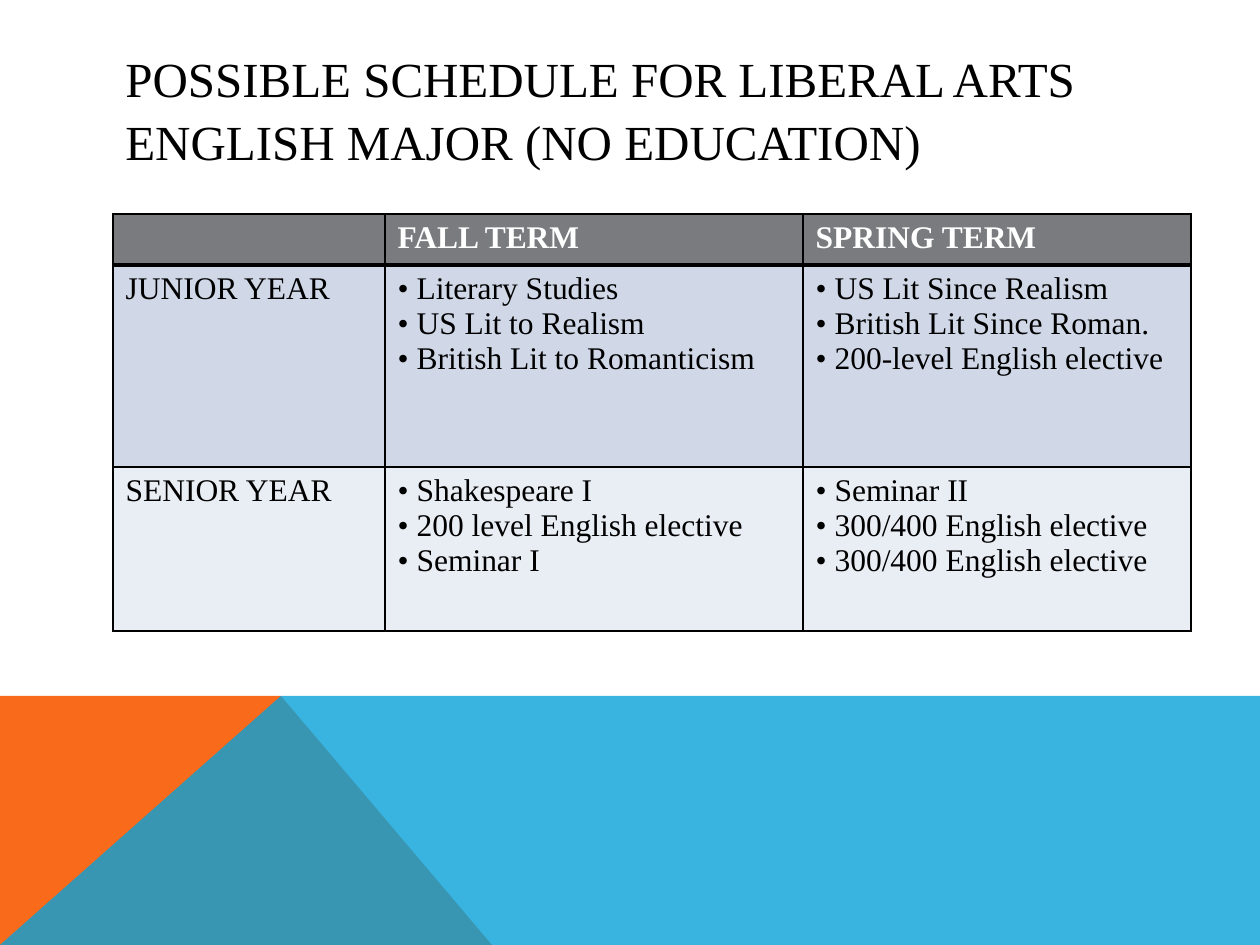
from typing import NamedTuple

from lxml import etree
from pptx import Presentation
from pptx.dml.color import RGBColor
from pptx.enum.text import MSO_ANCHOR
from pptx.oxml.ns import qn
from pptx.util import Pt

PX = 914400 / 126
MIDDLE = MSO_ANCHOR.MIDDLE
FONT = "Times New Roman"
COLORS = {
    "black": "000000",
    "white": "FFFFFF",
    "header": "797B7E",
    "junior": "D0D8E8",
    "senior": "E9EDF4",
    "orange": "F96A1B",
    "blue": "08A1D9",
}
TITLE = "POSSIBLE SCHEDULE FOR LIBERAL ARTS ENGLISH MAJOR (NO EDUCATION)"
COLUMN_WIDTHS = (272, 418, 388)


class Band(NamedTuple):
    points: list[tuple[int, int]]
    color: str
    opacity: int


class ScheduleRow(NamedTuple):
    height: int
    fill: str
    label: str
    terms: list[list[str]]
    top_line: int = 1
    bottom_line: int = 1
    header: bool = False


BANDS = [
    Band([(0, 945), (0, 696), (281, 696), (492, 945)], "orange", 100),
    Band([(0, 945), (281, 696), (1260, 696), (1260, 945)], "blue", 80),
]
SCHEDULE = [
    ScheduleRow(51, "header", "", [["FALL TERM"], ["SPRING TERM"]],
                bottom_line=3, header=True),
    ScheduleRow(202, "junior", "JUNIOR YEAR", [
        ["Literary Studies", "US Lit to Realism", "British Lit to Romanticism"],
        ["US Lit Since Realism", "British Lit Since Roman.",
         "200-level English elective"],
    ], top_line=3),
    ScheduleRow(164, "senior", "SENIOR YEAR", [
        ["Shakespeare I", "200 level English elective", "Seminar I"],
        ["Seminar II", "300/400 English elective", "300/400 English elective"],
    ]),
]


def emu(px: int) -> int:
    return round(px * PX)


def rgb(name: str) -> RGBColor:
    return RGBColor.from_string(COLORS[name])


def style_text(paragraph, size: int, color: str, bold: bool = False) -> None:
    paragraph.font.size = Pt(size)
    for run in paragraph.runs:
        run.font.name = FONT
        run.font.size = Pt(size)
        run.font.bold = bold
        run.font.color.rgb = rgb(color)


def draw_band(slide, band: Band) -> None:
    builder = slide.shapes.build_freeform(*band.points[0], scale=PX)
    builder.add_line_segments(band.points[1:], close=True)
    shape = builder.convert_to_shape()
    shape.shadow.inherit = False
    shape.line.fill.background()
    shape.fill.solid()
    shape.fill.fore_color.rgb = rgb(band.color)
    if band.opacity < 100:
        color = shape.fill._xPr.find(".//" + qn("a:srgbClr"))
        etree.SubElement(color, qn("a:alpha"), val=str(band.opacity * 1000))


def add_bullet(paragraph) -> None:
    properties = paragraph._p.get_or_add_pPr()
    properties.set("marL", str(emu(19)))
    properties.set("indent", str(-emu(19)))
    etree.SubElement(properties, qn("a:buFont"), typeface=FONT)
    etree.SubElement(properties, qn("a:buChar"), char="•")


def set_borders(cell, top: int, bottom: int) -> None:
    """Put black lines of the given point widths before the cell's fill."""
    properties = cell._tc.get_or_add_tcPr()
    widths = {"lnL": 1, "lnR": 1, "lnT": top, "lnB": bottom}
    for position, (side, width) in enumerate(widths.items()):
        line = etree.Element(qn(f"a:{side}"), w=str(Pt(width)))
        fill = etree.SubElement(line, qn("a:solidFill"))
        etree.SubElement(fill, qn("a:srgbClr"), val=COLORS["black"])
        properties.insert(position, line)


def fill_cell(cell, lines: list[str], row: ScheduleRow, bulleted: bool) -> None:
    cell.fill.solid()
    cell.fill.fore_color.rgb = rgb(row.fill)
    set_borders(cell, row.top_line, row.bottom_line)
    cell.text_frame.text = "\n".join(lines)
    for paragraph in cell.text_frame.paragraphs:
        style_text(paragraph, 18, "white" if row.header else "black", row.header)
        if bulleted:
            add_bullet(paragraph)


def draw_title(slide) -> None:
    title = slide.shapes.add_textbox(emu(113), emu(50), emu(1036), emu(115))
    frame = title.text_frame
    frame.word_wrap = True
    frame.vertical_anchor = MIDDLE
    frame.text = TITLE
    frame.paragraphs[0].line_spacing = 1.07
    style_text(frame.paragraphs[0], 28, "black")


def draw_schedule(slide) -> None:
    table = slide.shapes.add_table(
        len(SCHEDULE), len(COLUMN_WIDTHS), emu(113), emu(214),
        emu(sum(COLUMN_WIDTHS)), emu(sum(row.height for row in SCHEDULE)),
    ).table
    for column, width in zip(table.columns, COLUMN_WIDTHS):
        column.width = emu(width)
    for row_index, row in enumerate(SCHEDULE):
        table.rows[row_index].height = emu(row.height)
        for column_index, lines in enumerate([[row.label], *row.terms]):
            bulleted = column_index > 0 and not row.header
            fill_cell(table.cell(row_index, column_index), lines, row, bulleted)


def main() -> None:
    presentation = Presentation()
    presentation.slide_width = emu(1260)
    presentation.slide_height = emu(945)
    slide = presentation.slides.add_slide(presentation.slide_layouts[6])
    for band in BANDS:
        draw_band(slide, band)
    draw_title(slide)
    draw_schedule(slide)
    presentation.save("out.pptx")


if __name__ == "__main__":
    main()
